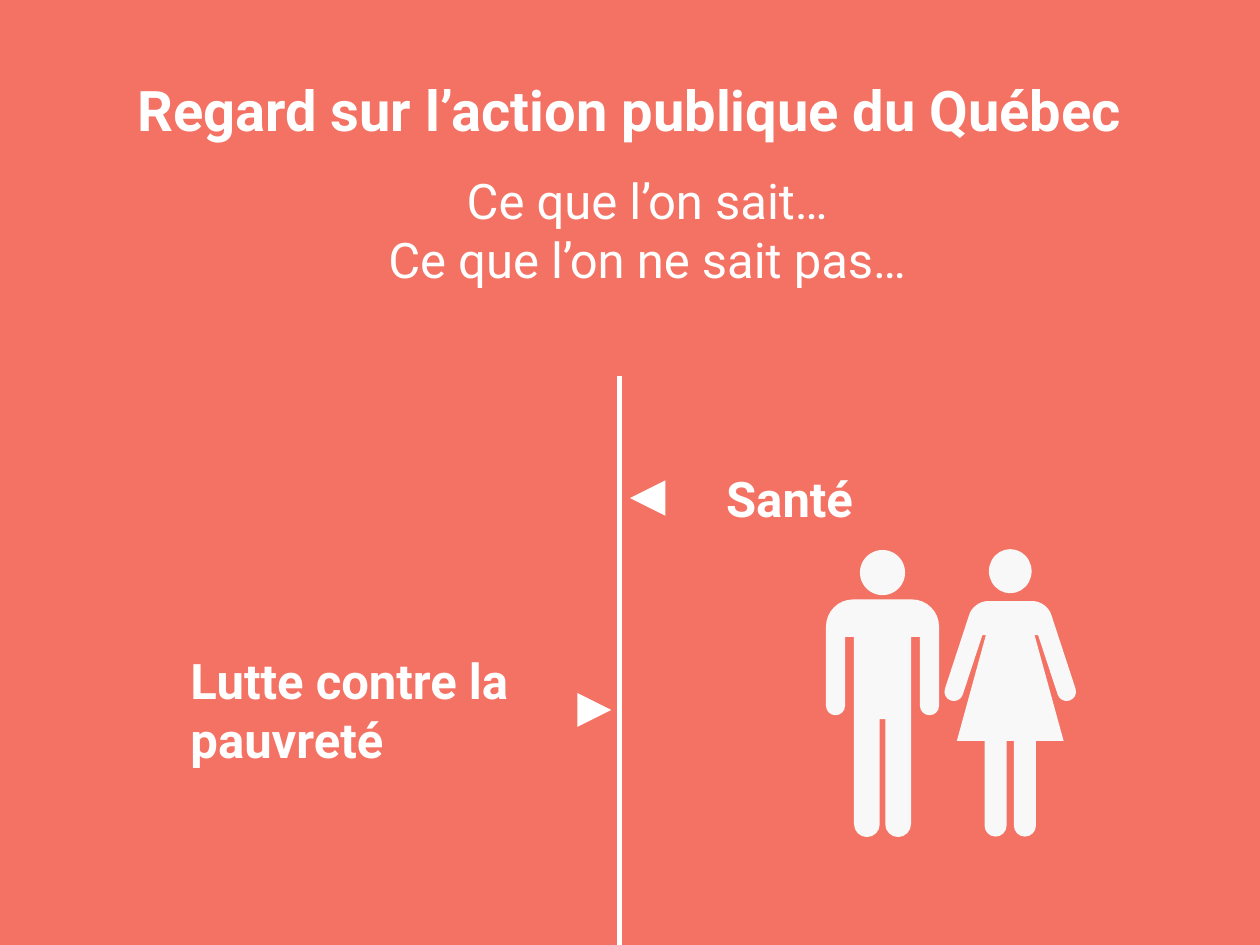
from lxml.etree import Element, SubElement
from pptx import Presentation
from pptx.dml.color import RGBColor
from pptx.enum.shapes import MSO_CONNECTOR, MSO_SHAPE
from pptx.enum.text import MSO_ANCHOR, MSO_AUTO_SIZE, PP_ALIGN
from pptx.oxml.ns import qn
from pptx.util import Pt

COLORS = {"background": "F47264", "white": "FFFFFF", "figure": "F8F8F8"}
FONT = "Roboto"

# lines, (left, top, width, height), size, bold
HEADINGS = [
    (["Regard sur l’action publique du Québec"], (36, 47.9, 648, 28.8), 32, True),
    (["Ce que l’on sait…", "Ce que l’on ne sait pas…"], (45.8, 116.64, 648, 28.8), 28, False),
]
LABELS = [
    (["Lutte contre la pauvreté"], (101.8, 368.2, 203.76, 74.88), 28, True),
    (["Santé"], (407.9, 264.24, 96.48, 41.04), 28, True),
]
AXIS_X, AXIS_TOP, AXIS_BOTTOM = 354, 214.8, 540
# left, top, side, rotation
POINTERS = [(360, 274.5, 20.2, 270), (329.9, 396, 19.4, 90)]

# Right half of each outline: offset from the centre line, y, corner trim
FIGURES = [
    {"center": 504.3, "head": (314.3, 25.8, 25.8),
     "half": [(32.3, 342.5, 15.5), (32.3, 408.7, 5.4), (21.4, 408.7, 5.4),
              (21.4, 364, 0), (16.3, 364, 0), (16.3, 478.3, 7.4),
              (1.6, 478.3, 7.3), (1.6, 411, 0)]},
    {"center": 577.3, "head": (313.8, 24.4, 25.2),
     "half": [(20.9, 343.5, 8), (39, 398.7, 5.3), (28.8, 402, 5.3),
              (15.9, 362.9, 0), (13.9, 362.9, 0), (30.5, 423.4, 0),
              (14.7, 423.4, 0), (14.7, 478.1, 6.3), (2.1, 478.1, 6.3),
              (2.1, 423.4, 0)]},
]
KAPPA = 0.55
UNITS_PER_POINT = 100


def color(name):
    return RGBColor.from_string(COLORS[name])


def add_text(slide, lines, box, size, bold, heading):
    text_box = slide.shapes.add_textbox(*map(Pt, box))
    frame = text_box.text_frame
    frame.text = "\n".join(lines)
    frame.word_wrap = True
    frame.vertical_anchor = MSO_ANCHOR.MIDDLE if heading else MSO_ANCHOR.TOP
    frame.auto_size = MSO_AUTO_SIZE.NONE if heading else MSO_AUTO_SIZE.SHAPE_TO_FIT_TEXT
    for paragraph in frame.paragraphs:
        paragraph.alignment = PP_ALIGN.CENTER if heading else PP_ALIGN.LEFT
        font = paragraph.font
        font.name, font.size, font.bold = FONT, Pt(size), bold
        font.color.rgb = color("white")


def paint(shape, color_name):
    shape.shadow.inherit = False
    shape.fill.solid()
    shape.fill.fore_color.rgb = color(color_name)
    shape.line.fill.background()


def toward(start, end, distance):
    dx, dy = end[0] - start[0], end[1] - start[1]
    ratio = distance / (dx * dx + dy * dy) ** 0.5
    return start[0] + dx * ratio, start[1] + dy * ratio


def rounded_outline(corners):
    """Return the outline's points and the indexes where a curve's controls begin."""
    points, curves = [], []
    for index, (x, y, trim) in enumerate(corners):
        corner = (x, y)
        if not trim:
            points.append(corner)
            continue
        before, after = corners[index - 1], corners[(index + 1) % len(corners)]
        pull = trim * (1 - KAPPA)
        curves.append(len(points) + 1)
        points += [toward(corner, before, trim), toward(corner, before, pull),
                   toward(corner, after, pull), toward(corner, after, trim)]
    return points, curves


def bend(shape, curves):
    """Merge the three line segments at each index into one Bézier curve."""
    path = shape._element.find(".//" + qn("a:path"))
    segments = list(path)
    for index in curves:
        curve = Element(qn("a:cubicBezTo"))
        path.replace(segments[index], curve)
        for segment in segments[index:index + 3]:
            curve.append(segment[0])
        for segment in segments[index + 1:index + 3]:
            path.remove(segment)


def add_figure(slide, center, head, half):
    group = slide.shapes.add_group_shape()
    mirrored = [(-offset, y, trim) for offset, y, trim in reversed(half)]
    corners = [(center + offset, y, trim) for offset, y, trim in half + mirrored]
    points, curves = rounded_outline(corners)
    points = [(x * UNITS_PER_POINT, y * UNITS_PER_POINT) for x, y in points]
    builder = group.shapes.build_freeform(*points[0], scale=Pt(1) / UNITS_PER_POINT)
    builder.add_line_segments(points[1:], close=True)
    body = builder.convert_to_shape()
    bend(body, curves)
    paint(body, "figure")
    top, width, height = head
    box = (center - width / 2, top, width, height)
    paint(group.shapes.add_shape(MSO_SHAPE.OVAL, *map(Pt, box)), "figure")


def main():
    presentation = Presentation()
    presentation.slide_width, presentation.slide_height = Pt(720), Pt(540)
    slide = presentation.slides.add_slide(presentation.slide_layouts[6])
    slide.background.fill.solid()
    slide.background.fill.fore_color.rgb = color("background")

    for heading in HEADINGS:
        add_text(slide, *heading, heading=True)

    axis = slide.shapes.add_connector(
        MSO_CONNECTOR.STRAIGHT, Pt(AXIS_X), Pt(AXIS_TOP), Pt(AXIS_X), Pt(AXIS_BOTTOM))
    axis.line.color.rgb = color("white")
    axis.line.width = Pt(3)
    SubElement(axis._element.spPr, qn("a:effectLst"))

    for left, top, side, rotation in POINTERS:
        pointer = slide.shapes.add_shape(
            MSO_SHAPE.FLOWCHART_EXTRACT, Pt(left), Pt(top), Pt(side), Pt(side))
        pointer.rotation = rotation
        paint(pointer, "white")

    for label in LABELS:
        add_text(slide, *label, heading=False)
    for figure in FIGURES:
        add_figure(slide, **figure)

    presentation.save("out.pptx")


if __name__ == "__main__":
    main()
